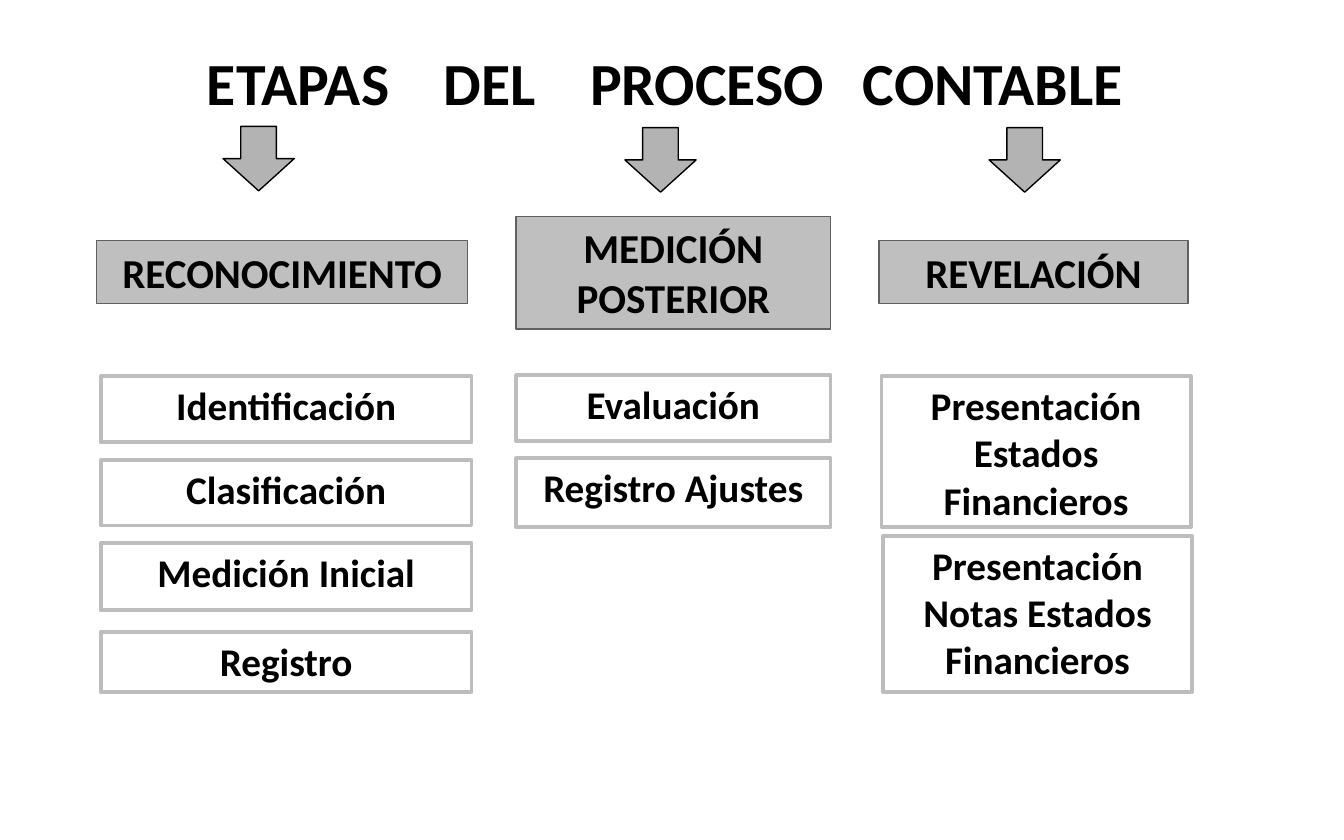
from lxml.etree import SubElement
from pptx import Presentation
from pptx.dml.color import RGBColor
from pptx.enum.shapes import MSO_SHAPE
from pptx.enum.text import MSO_ANCHOR, MSO_AUTO_SIZE, PP_ALIGN
from pptx.oxml.ns import qn
from pptx.util import Inches, Pt


def tint(code):
    return RGBColor.from_string(code)


class Deck:
    """Hold the style and the current slide, and draw each kind of element."""

    font = {"name": "Calibri", "bold": True}
    tight = (0.08, 0.04, 0.08, 0.04)
    loose = (0.1, 0.05, 0.1, 0.05)

    def __init__(self, wide, high):
        self.prs = Presentation()
        self.prs.slide_width = Inches(wide)
        self.prs.slide_height = Inches(high)
        self.slide = self.prs.slides.add_slide(self.prs.slide_layouts[5])

    def label(self, shape, text, size, pad, **form):
        frame = shape.text_frame
        style = {"word_wrap": True, "auto_size": MSO_AUTO_SIZE.NONE,
                 "vertical_anchor": MSO_ANCHOR.TOP} | form
        sides = ("left", "top", "right", "bottom")
        style |= {f"margin_{side}": Inches(gap) for side, gap in zip(sides, pad)}
        for key, value in style.items():
            setattr(frame, key, value)
        frame.text = text
        para = frame.paragraphs[0]
        para.alignment = PP_ALIGN.CENTER
        run = para.runs[0]
        for key, value in (self.font | {"size": Pt(size)}).items():
            setattr(run.font, key, value)
        run.font.color.rgb = tint("000000")
        return para

    def title(self, words, stops, box, pad):
        shape = self.slide.shapes.title
        for key, value in zip(("left", "top", "width", "height"), box):
            setattr(shape, key, Inches(value))
        para = self.label(shape, "\t".join(words), 32, pad,
                          vertical_anchor=MSO_ANCHOR.MIDDLE)
        para.alignment = PP_ALIGN.LEFT
        tabs = SubElement(para._p.get_or_add_pPr(), qn("a:tabLst"))
        for stop in stops:
            SubElement(tabs, qn("a:tab"), pos=str(Inches(stop)), algn="l")

    def form(self, kind, box, fill, line, width):
        shape = self.slide.shapes.add_shape(kind, *map(Inches, box))
        shape.shadow.inherit = False
        shape.fill.solid()
        shape.fill.fore_color.rgb = tint(fill)
        shape.line.color.rgb = tint(line)
        shape.line.width = Pt(width)
        return shape

    def arrow(self, left, top):
        self.form(MSO_SHAPE.DOWN_ARROW, (left, top, 0.53, 0.48),
                  "B3B3B3", "000000", 0.75)

    def head(self, text, box):
        shape = self.form(MSO_SHAPE.RECTANGLE, box, "BFBFBF", "606060", 0.75)
        self.label(shape, text, 22, self.loose,
                   auto_size=MSO_AUTO_SIZE.SHAPE_TO_FIT_TEXT)

    def step(self, text, box):
        shape = self.form(MSO_SHAPE.RECTANGLE, box, "FFFFFF", "BDBDBD", 2)
        self.label(shape, text, 21, self.tight)


def main():
    deck = Deck(10, 6.25)
    deck.title(("ETAPAS", "DEL", "PROCESO", "CONTABLE"), (1.76, 2.85, 4.88),
               (0.97, 0.3, 7.97, 0.62), (0.57, 0.04, 0.08, 0.04))
    stages = [
        ("RECONOCIMIENTO", (0.72, 1.79, 2.76, 0.47), (1.66, 0.94),
         [("Identificación", 0.75, 2.8, 0.49),
          ("Clasificación", 0.75, 3.42, 0.49),
          ("Medición Inicial", 0.75, 4.04, 0.5),
          ("Registro", 0.75, 4.7, 0.45)]),
        ("MEDICIÓN POSTERIOR", (3.84, 1.61, 2.34, 0.84), (4.65, 0.95),
         [("Evaluación", 3.84, 2.79, 0.49),
          ("Registro Ajustes", 3.84, 3.41, 0.51)]),
        ("REVELACIÓN", (6.54, 1.79, 2.3, 0.47), (7.36, 0.95),
         [("Presentación Estados Financieros", 6.56, 2.8, 1.12),
          ("Presentación Notas Estados Financieros", 6.57, 3.99, 1.16)]),
    ]
    for name, box, tip, steps in stages:
        deck.arrow(*tip)
        deck.head(name, box)
        for text, left, top, high in steps:
            deck.step(text, (left, top, box[2], high))
    deck.prs.save("out.pptx")


if __name__ == "__main__":
    main()
